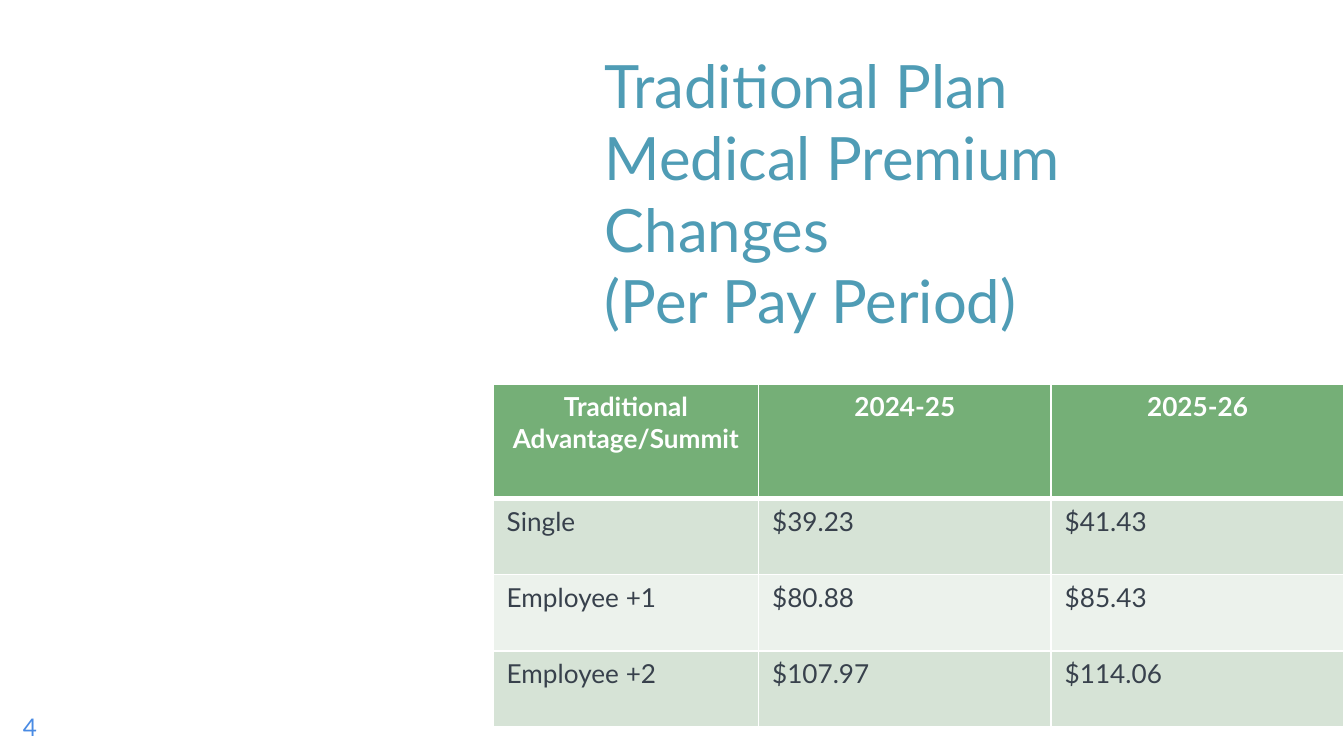
from lxml import etree
from pptx import Presentation
from pptx.dml.color import RGBColor
from pptx.enum.text import MSO_ANCHOR, MSO_AUTO_SIZE, PP_ALIGN
from pptx.oxml.ns import qn
from pptx.util import Inches, Pt

LEFT, CENTER = PP_ALIGN.LEFT, PP_ALIGN.CENTER
BOTTOM, MIDDLE = MSO_ANCHOR.BOTTOM, MSO_ANCHOR.MIDDLE
NO_AUTOFIT = MSO_AUTO_SIZE.NONE
TITLE_ONLY = 5
FONT = "Lato"
WIDTH = 10
HEIGHT = WIDTH * 9 / 16

PREMIUMS = [
    ["Traditional\nAdvantage/Summit", "2024-25", "2025-26"],
    ["Single", "$39.23", "$41.43"],
    ["Employee +1", "$80.88", "$85.43"],
    ["Employee +2", "$107.97", "$114.06"],
]
COLUMN_SHARES = [0.312, 0.344, 0.344]
ROW_SHARES = [1 / 3, 2 / 9, 2 / 9, 2 / 9]


def color(hex_value):
    return RGBColor.from_string(hex_value)


def format_text(text_frame, size, hex_value, bold=False, alignment=LEFT):
    for paragraph in text_frame.paragraphs:
        paragraph.alignment = alignment
        for run in paragraph.runs:
            run.font.name = FONT
            run.font.size = Pt(size)
            run.font.bold = bold
            run.font.color.rgb = color(hex_value)


def prepare_frame(text_frame, anchor):
    """Wrap text in a frame without margins or automatic resizing."""
    text_frame.word_wrap = True
    text_frame.auto_size = NO_AUTOFIT
    text_frame.vertical_anchor = anchor
    text_frame.margin_left = text_frame.margin_right = 0
    text_frame.margin_top = text_frame.margin_bottom = 0


def set_borders(cell, bottom_width):
    """Draw white cell borders; they must come before the fill."""
    properties = cell._tc.get_or_add_tcPr()
    for side, width in (("L", 1), ("R", 1), ("T", 1), ("B", bottom_width)):
        line = etree.SubElement(properties, qn(f"a:ln{side}"), w=str(Pt(width)))
        fill = etree.SubElement(line, qn("a:solidFill"))
        etree.SubElement(fill, qn("a:srgbClr"), val="FFFFFF")


def add_title(slide, box):
    title = slide.shapes.title
    title.left, title.top, title.width, title.height = map(Inches, box)
    text_frame = title.text_frame
    prepare_frame(text_frame, BOTTOM)
    text_frame.text = "Traditional Plan \vMedical Premium Changes\v(Per Pay Period)"
    format_text(text_frame, 32, "4F9CB5")


def add_premium_table(slide, box):
    left, top, width, height = box
    frame = slide.shapes.add_table(len(PREMIUMS), len(COLUMN_SHARES), *map(Inches, box))
    table = frame.table
    for column, share in zip(table.columns, COLUMN_SHARES):
        column.width = Inches(width * share)
    for row, share in zip(table.rows, ROW_SHARES):
        row.height = Inches(height * share)
    for row_index, values in enumerate(PREMIUMS):
        header = row_index == 0
        band = "75AF77" if header else ("D6E3D6" if row_index % 2 else "ECF2EC")
        for column_index, value in enumerate(values):
            cell = table.cell(row_index, column_index)
            set_borders(cell, 3 if header else 1)
            cell.fill.solid()
            cell.fill.fore_color.rgb = color(band)
            cell.text_frame.text = value
            format_text(cell.text_frame, 14, "FFFFFF" if header else "38414C",
                        header, CENTER if header else LEFT)


def add_slide_number(slide, box):
    text_frame = slide.shapes.add_textbox(*map(Inches, box)).text_frame
    prepare_frame(text_frame, MIDDLE)
    text_frame.text = "4"
    format_text(text_frame, 13, "498BE4")


def main():
    presentation = Presentation()
    presentation.slide_width = Inches(WIDTH)
    presentation.slide_height = Inches(HEIGHT)
    slide = presentation.slides.add_slide(presentation.slide_layouts[TITLE_ONLY])
    add_slide_number(slide, (0.17, HEIGHT - 0.43, 0.6, 0.43))
    add_title(slide, (WIDTH * 0.45, 1.56, WIDTH / 2, 0.94))
    add_premium_table(slide, (3.67, 2.86, WIDTH - 3.67, 2.55))
    presentation.save("out.pptx")


if __name__ == "__main__":
    main()
